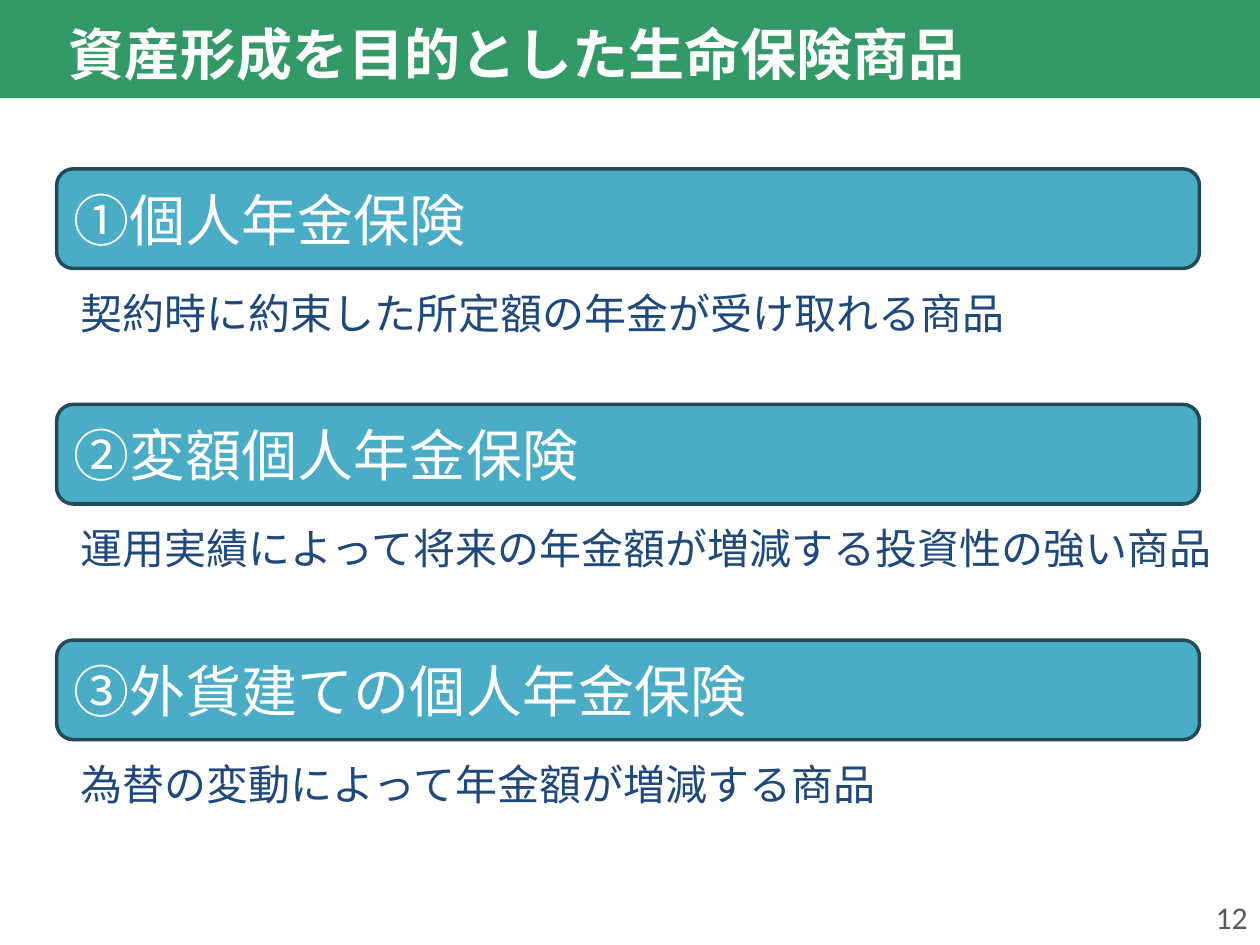
"""Build a slide on three life insurance products for asset building."""

from dataclasses import dataclass

from lxml.etree import SubElement as Sub
from pptx import Presentation
from pptx.dml.color import RGBColor as Rgb
from pptx.enum.shapes import MSO_SHAPE as Kind
from pptx.enum.text import MSO_ANCHOR as Anchor, MSO_AUTO_SIZE as Auto, PP_ALIGN as Align
from pptx.oxml.ns import qn
from pptx.shapes.autoshape import Shape
from pptx.slide import Slide
from pptx.util import Pt


@dataclass(frozen=True)
class Theme:
    """Colours, fonts and type sizes of the slide."""

    green: Rgb = Rgb(0x33, 0x99, 0x66)
    teal: Rgb = Rgb(0x4B, 0xAC, 0xC6)
    edge: Rgb = Rgb(0x21, 0x4B, 0x57)
    navy: Rgb = Rgb(0x1F, 0x49, 0x7D)
    grey: Rgb = Rgb(0x59, 0x59, 0x59)
    white: Rgb = Rgb(0xFF, 0xFF, 0xFF)
    font: str = "Noto Sans CJK JP"
    digit: str = "Calibri"
    head: int = 32
    note: int = 24
    page: int = 18


@dataclass(frozen=True)
class Item:
    """One product: its name, its note and the width of the note."""

    name: str
    note: str
    width: float


THEME = Theme()
TITLE = "資産形成を目的とした生命保険商品"
ITEMS = (
    Item("①個人年金保険", "契約時に約束した所定額の年金が受け取れる商品", 674.64),
    Item("②変額個人年金保険", "運用実績によって将来の年金額が増減する投資性の強い商品", 713.52),
    Item("③外貨建ての個人年金保険", "為替の変動によって年金額が増減する商品", 713.52),
)
TOP, STEP, DROP = 96.48, 134.64, 64.08


def write(shape: Shape, text: str, size: int, color: Rgb, font: str = THEME.font,
          bold: bool = False, align: Align = Align.LEFT, anchor: Anchor = Anchor.MIDDLE) -> None:
    """Put one formatted paragraph into a shape."""
    frame = shape.text_frame
    frame.text = text
    frame.word_wrap = True
    frame.auto_size = Auto.NONE
    frame.vertical_anchor = anchor
    para = frame.paragraphs[0]
    para.alignment = align
    run = para.runs[0]
    run.font.size = Pt(size)
    run.font.bold = bold
    run.font.color.rgb = color
    run.font.name = font
    Sub(run.font._element, qn("a:ea"), typeface=font)


def add_title(slide: Slide) -> None:
    """Turn the title placeholder into the green banner."""
    title = slide.shapes.title
    title.left, title.top, title.width, title.height = Pt(0), Pt(0), Pt(720), Pt(56.16)
    title.fill.solid()
    title.fill.fore_color.rgb = THEME.green
    write(title, TITLE, THEME.head, THEME.white, bold=True)
    frame = title.text_frame
    frame.margin_left, frame.margin_top = Pt(39.2), Pt(8.64)


def add_item(slide: Slide, item: Item, top: float) -> None:
    """Draw the bar of a product with its note below."""
    bar = slide.shapes.add_shape(Kind.ROUNDED_RECTANGLE, Pt(32.4), Pt(top), Pt(653.04), Pt(56.88))
    bar.shadow.inherit = False
    bar.fill.solid()
    bar.fill.fore_color.rgb = THEME.teal
    bar.line.color.rgb = THEME.edge
    bar.line.width = Pt(2)
    write(bar, item.name, THEME.head, THEME.white)
    note = slide.shapes.add_textbox(Pt(38.88), Pt(top + DROP), Pt(item.width), Pt(36))
    write(note, item.note, THEME.note, THEME.navy, anchor=Anchor.TOP)


def add_page(slide: Slide) -> None:
    """Write the page number in the bottom right corner."""
    page = slide.shapes.add_textbox(Pt(552.24), Pt(509.76), Pt(167.76), Pt(28.8))
    write(page, "12", THEME.page, THEME.grey, THEME.digit, align=Align.RIGHT)


def main() -> None:
    """Build and save the slide."""
    deck = Presentation()
    deck.slide_width, deck.slide_height = Pt(720), Pt(540)
    slide = deck.slides.add_slide(deck.slide_layouts[5])
    add_title(slide)
    for row, item in enumerate(ITEMS):
        add_item(slide, item, TOP + row * STEP)
    add_page(slide)
    deck.save("out.pptx")


if __name__ == "__main__":
    main()
